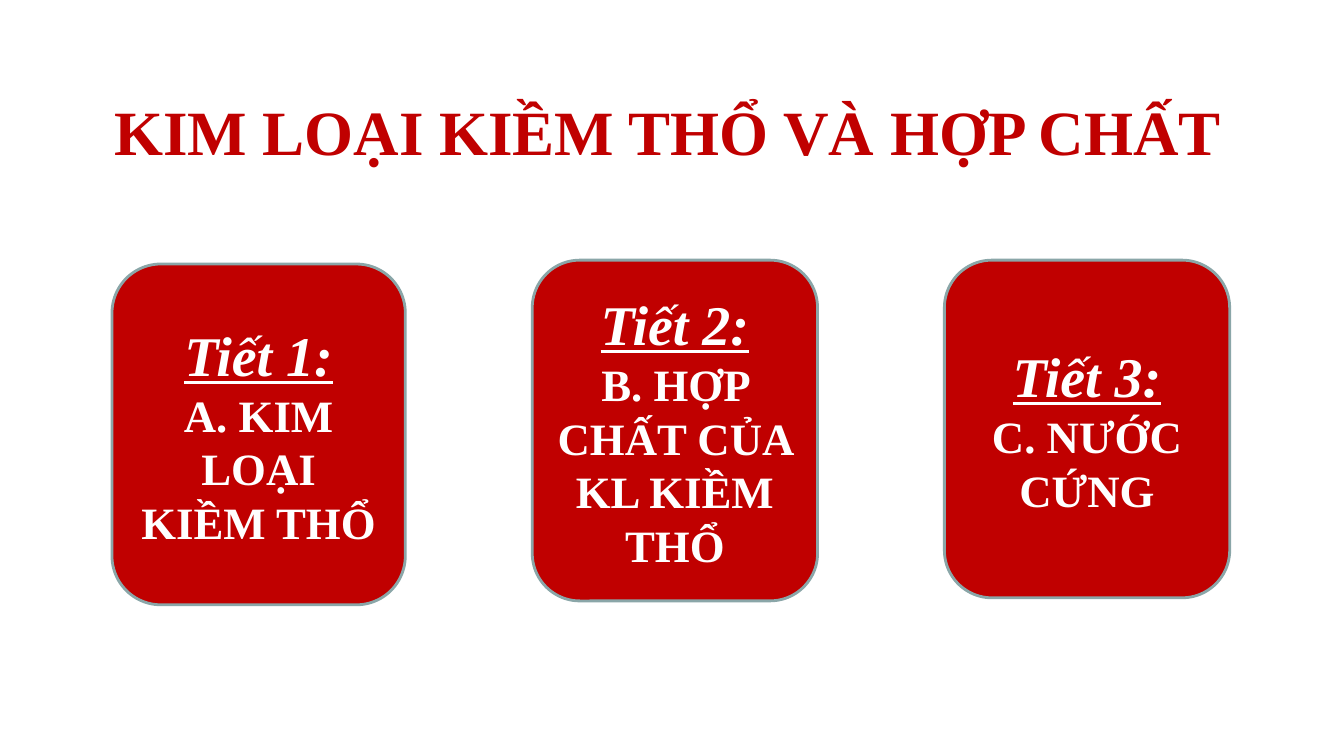
import pptx
import pptx.util
import pptx.dml.color
import pptx.enum.shapes
import pptx.enum.text

Pt = pptx.util.Pt
RGB = pptx.dml.color.RGBColor

TITLE = "KIM LOẠI KIỀM THỔ VÀ HỢP CHẤT"
# heading, topic, (left, top, width, height) in points
CARDS = [
    ("Tiết 1:", "A. KIM LOẠI KIỀM THỔ", (80, 188.6, 209.5, 243.4)),
    ("Tiết 2:", "B. HỢP CHẤT CỦA KL KIỀM THỔ", (380.2, 185.8, 203.8, 243.4)),
    ("Tiết 3:", "C. NƯỚC CỨNG", (674.6, 185.8, 203.8, 241.2)),
]
FONT = "Times New Roman"
RED = RGB(0xC0, 0x00, 0x00)
WHITE = RGB(0xFF, 0xFF, 0xFF)
EDGE = RGB(0x8A, 0xA6, 0xA8)


def write(frame, lines, color):
    """Fill a frame with centred bold lines of (text, size, is heading)."""
    frame.word_wrap = True
    frame.vertical_anchor = pptx.enum.text.MSO_ANCHOR.MIDDLE
    frame.text = "\n".join(text for text, _, _ in lines)
    for para, (_, size, head) in zip(frame.paragraphs, lines):
        para.alignment = pptx.enum.text.PP_ALIGN.CENTER
        font = para.runs[0].font
        font.name = FONT
        font.size = Pt(size)
        font.bold = True
        font.italic = font.underline = head
        font.color.rgb = color


deck = pptx.Presentation()
deck.slide_width, deck.slide_height = Pt(960), Pt(540)
slide = deck.slides.add_slide(deck.slide_layouts[6])

title = slide.shapes.add_textbox(Pt(38.9), Pt(63.4), Pt(876.2), Pt(59.8))
write(title.text_frame, [(TITLE, 45, False)], RED)

for head, topic, box in CARDS:
    card = slide.shapes.add_shape(
        pptx.enum.shapes.MSO_SHAPE.ROUNDED_RECTANGLE, *map(Pt, box))
    card.shadow.inherit = False
    card.fill.solid()
    card.fill.fore_color.rgb = RED
    card.line.color.rgb = EDGE
    card.line.width = Pt(2)
    write(card.text_frame, [(head, 40, True), (topic, 32, False)], WHITE)

deck.save("out.pptx")
